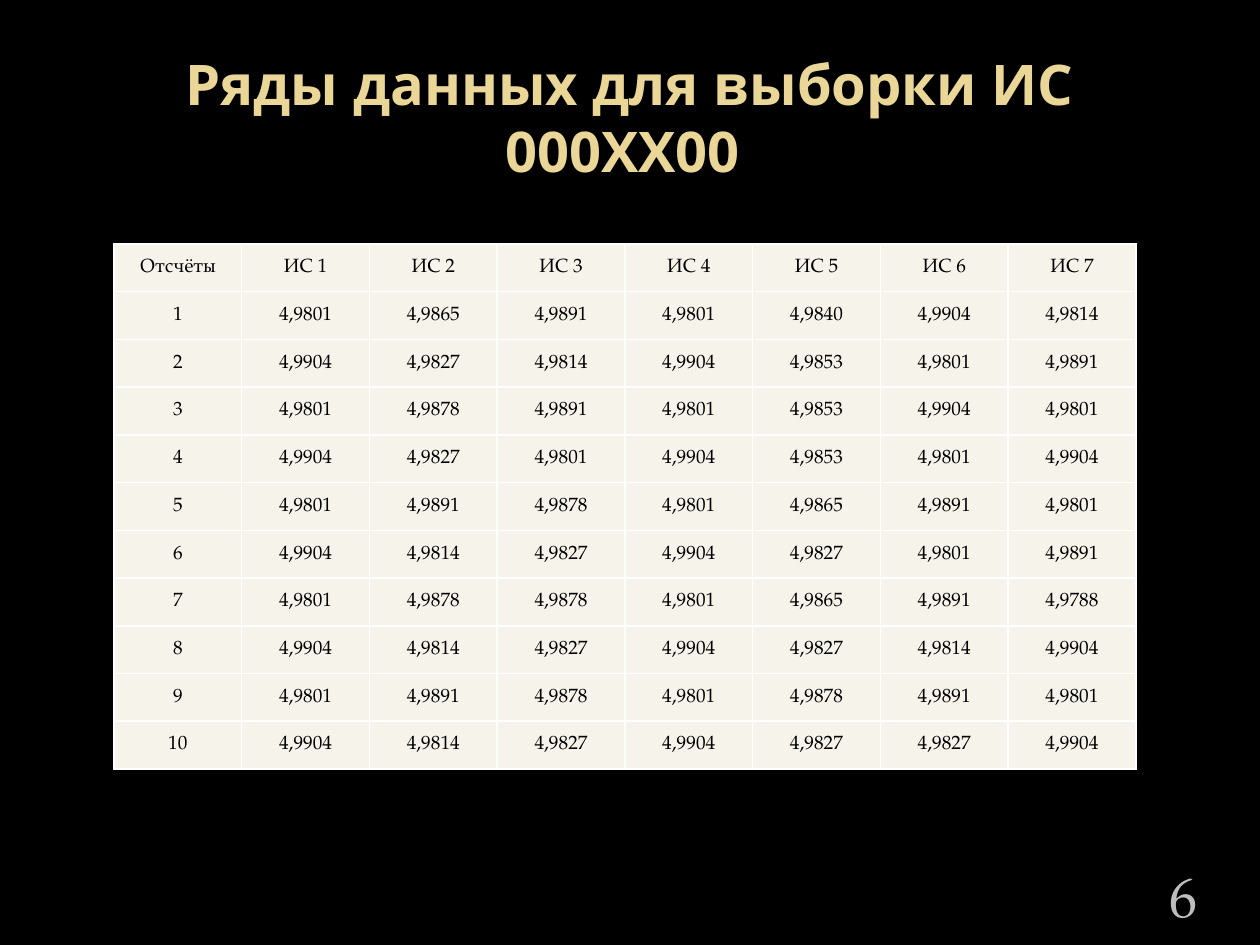
from lxml.etree import SubElement
from pptx import Presentation
from pptx.dml.color import RGBColor
from pptx.enum.text import MSO_ANCHOR, PP_ALIGN
from pptx.oxml.ns import qn
from pptx.util import Pt

EMU_PER_PX = 914400 / 126

BLACK = RGBColor(0x00, 0x00, 0x00)
WHITE = RGBColor(0xFF, 0xFF, 0xFF)
GOLD = RGBColor(0xEA, 0xD6, 0x96)
CREAM = RGBColor(0xF6, 0xF3, 0xEA)
GREY = RGBColor(0xBD, 0xBD, 0xBD)

TITLE_FONT = "Open Sans"
BODY_FONT = "TeX Gyre Pagella"

HEADER = ["Отсчёты"] + [f"ИС {number}" for number in range(1, 8)]
READINGS = """
4,9801 4,9865 4,9891 4,9801 4,9840 4,9904 4,9814
4,9904 4,9827 4,9814 4,9904 4,9853 4,9801 4,9891
4,9801 4,9878 4,9891 4,9801 4,9853 4,9904 4,9801
4,9904 4,9827 4,9801 4,9904 4,9853 4,9801 4,9904
4,9801 4,9891 4,9878 4,9801 4,9865 4,9891 4,9801
4,9904 4,9814 4,9827 4,9904 4,9827 4,9801 4,9891
4,9801 4,9878 4,9878 4,9801 4,9865 4,9891 4,9788
4,9904 4,9814 4,9827 4,9904 4,9827 4,9814 4,9904
4,9801 4,9891 4,9878 4,9801 4,9878 4,9891 4,9801
4,9904 4,9814 4,9827 4,9904 4,9827 4,9827 4,9904
"""


def px(length):
    return round(length * EMU_PER_PX)


def write(text_frame, text, font_name, size, color, align, bold=False):
    """Put one formatted paragraph into a text frame."""
    text_frame.text = text
    para = text_frame.paragraphs[0]
    para.alignment = align
    for span in para.runs:
        span.font.name = font_name
        span.font.size = Pt(size)
        span.font.bold = bold
        span.font.color.rgb = color


def add_text(page, left, top, width, height, anchor, side_inset):
    """Add a wrapping text box and return its text frame."""
    box = page.shapes.add_textbox(px(left), px(top), px(width), px(height))
    frame = box.text_frame
    frame.word_wrap = True
    frame.vertical_anchor = anchor
    frame.margin_left = frame.margin_right = px(side_inset)
    return frame


def set_borders(cell, color, width):
    """Draw a solid line on each side of a cell."""
    properties = cell._tc.get_or_add_tcPr()
    for position, side in enumerate(("lnL", "lnR", "lnT", "lnB")):
        line = SubElement(properties, qn(f"a:{side}"), w=str(Pt(width)))
        fill = SubElement(line, qn("a:solidFill"))
        SubElement(fill, qn("a:srgbClr"), val=str(color))
        properties.insert(position, line)


def add_readings_table(page, left, top, width, height, rows):
    row_count, column_count = len(rows), len(rows[0])
    table = page.shapes.add_table(
        row_count, column_count, px(left), px(top), px(width), px(height)
    ).table
    for column in table.columns:
        column.width = px(width / column_count)
    for row, values in zip(table.rows, rows):
        row.height = px(height / row_count)
        for cell, value in zip(row.cells, values):
            cell.margin_left = cell.margin_right = cell.margin_top = px(1)
            cell.margin_bottom = 0
            cell.vertical_anchor = MSO_ANCHOR.MIDDLE
            cell.fill.solid()
            cell.fill.fore_color.rgb = CREAM
            set_borders(cell, WHITE, 1)
            write(cell.text_frame, value, BODY_FONT, 11, BLACK, PP_ALIGN.CENTER)


def main():
    deck = Presentation()
    deck.slide_width, deck.slide_height = px(1260), px(945)
    page = deck.slides.add_slide(deck.slide_layouts[6])
    page.background.fill.solid()
    page.background.fill.fore_color.rgb = BLACK

    # Title
    title = add_text(page, 63, 38, 1134, 157, MSO_ANCHOR.MIDDLE, 13)
    write(title, "Ряды данных для выборки ИС 000ХХ00 ", TITLE_FONT, 32, GOLD,
          PP_ALIGN.CENTER, bold=True)

    # Readings, numbered from 1
    rows = [HEADER]
    for number, line in enumerate(READINGS.strip().splitlines(), 1):
        rows.append([str(number)] + line.split())
    add_readings_table(page, 114, 244, 1022, 525, rows)

    # Page number
    page_number = add_text(page, 1092, 885, 105, 50, MSO_ANCHOR.BOTTOM, 0)
    write(page_number, "6", BODY_FONT, 32, GREY, PP_ALIGN.RIGHT)

    deck.save("out.pptx")


if __name__ == "__main__":
    main()
